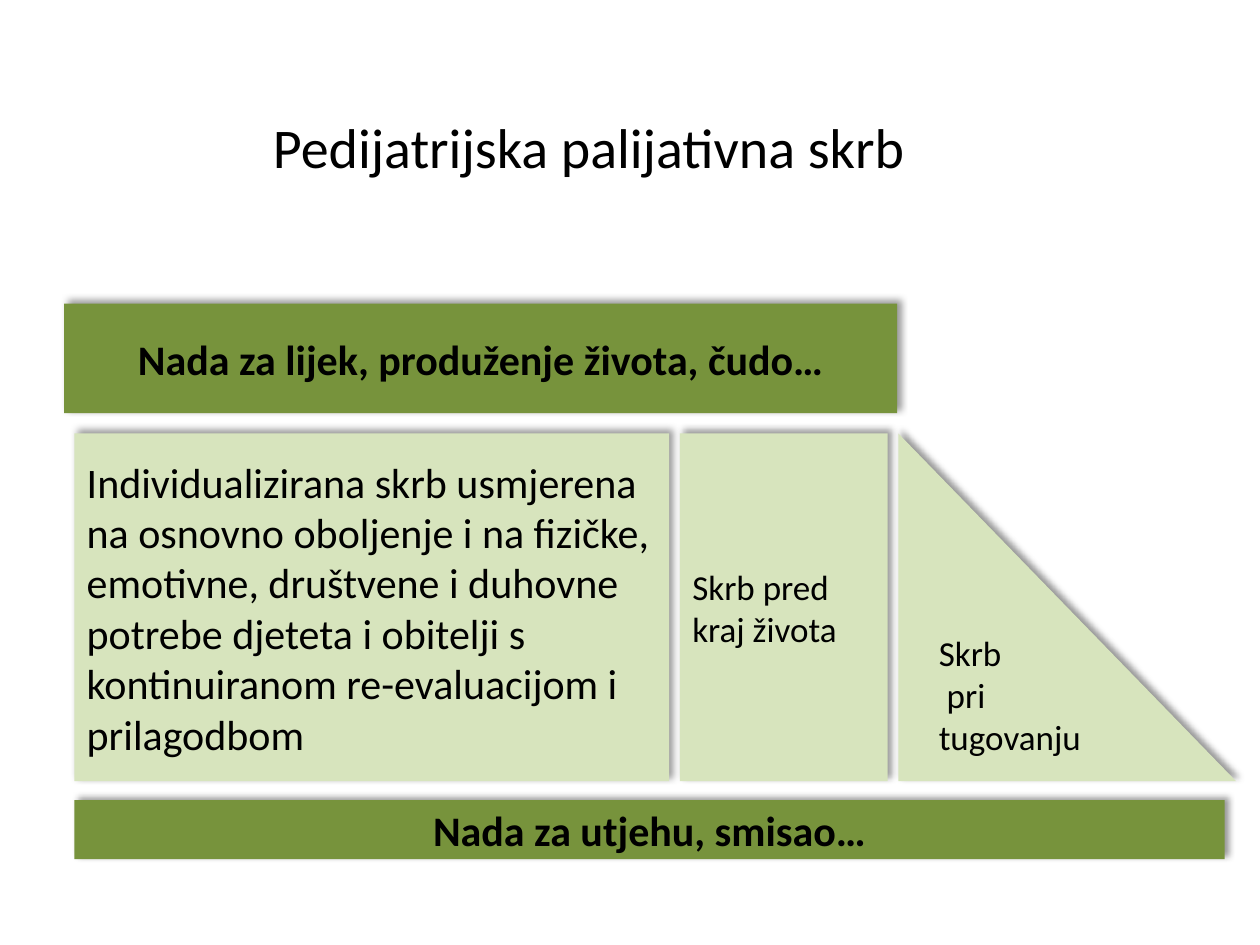
"""Build the slide on paediatric palliative care and its phases."""
from lxml.etree import SubElement
from pptx import Presentation
from pptx.dml.color import RGBColor
from pptx.enum.shapes import MSO_SHAPE as Shape
from pptx.enum.text import MSO_ANCHOR as Anchor, PP_ALIGN as Align
from pptx.oxml.ns import qn
from pptx.util import Pt

BLACK = RGBColor(0x00, 0x00, 0x00)
HOPE_GREEN = RGBColor(0x77, 0x93, 0x3C)
CARE_GREEN = RGBColor(0xD7, 0xE4, 0xBD)

TITLE = "Pedijatrijska palijativna skrb"
HOPES = [
    ("Nada za lijek, produženje života, čudo…", (36.7, 173.5, 476, 62.6)),
    ("Nada za utjehu, smisao…", (42.5, 457.2, 657.4, 33.8)),
]
PHASES = [
    (["Individualizirana skrb usmjerena na osnovno oboljenje i na fizičke, "
      "emotivne, društvene i duhovne potrebe djeteta i obitelji s "
      "kontinuiranom re-evaluacijom i prilagodbom"], Shape.RECTANGLE, 340, 24),
    (["Skrb pred kraj života"], Shape.RECTANGLE, 118.8, 20),
    (["Skrb", " pri tugovanju"], Shape.RIGHT_TRIANGLE, 193, 20),
]
PHASE_LEFT, PHASE_TOP, PHASE_HEIGHT, PHASE_GAP = 42.5, 247.7, 198.7, 6


def write(frame, lines, size, align, bold=False):
    frame.word_wrap = True
    frame.text = "\n".join(lines)
    for paragraph in frame.paragraphs:
        paragraph.alignment = align
        font = paragraph.font
        font.name, font.size, font.bold = "Calibri", Pt(size), bold
        font.color.rgb = BLACK


def cast_shadow(shape):
    shape.shadow.inherit = False
    effects = shape._element.spPr.find(qn("a:effectLst"))
    shadow = SubElement(effects, qn("a:outerShdw"), blurRad=str(Pt(4)),
                        dist=str(Pt(3)), dir=str(315 * 60000),
                        algn="bl", rotWithShape="0")
    color = SubElement(shadow, qn("a:srgbClr"), val=str(BLACK))
    SubElement(color, qn("a:alpha"), val="40000")


def add_block(slide, kind, box, fill, lines, size, align, bold=False):
    block = slide.shapes.add_shape(kind, *map(Pt, box))
    block.fill.solid()
    block.fill.fore_color.rgb = fill
    block.line.fill.background()
    cast_shadow(block)
    block.text_frame.vertical_anchor = Anchor.MIDDLE
    write(block.text_frame, lines, size, align, bold)


def main():
    deck = Presentation()
    deck.slide_width, deck.slide_height = Pt(720), Pt(540)
    slide = deck.slides.add_slide(deck.slide_layouts[6])

    title = slide.shapes.add_textbox(Pt(25.2), Pt(60.5), Pt(622.8), Pt(442))
    write(title.text_frame, [TITLE], 32, Align.CENTER)

    (cure, cure_box), (comfort, comfort_box) = HOPES
    add_block(slide, Shape.RECTANGLE, cure_box, HOPE_GREEN, [cure], 24, Align.CENTER, True)
    left = PHASE_LEFT
    for lines, kind, width, size in PHASES:
        box = (left, PHASE_TOP, width, PHASE_HEIGHT)
        add_block(slide, kind, box, CARE_GREEN, lines, size, Align.LEFT)
        left += width + PHASE_GAP
    add_block(slide, Shape.RECTANGLE, comfort_box, HOPE_GREEN, [comfort], 24, Align.CENTER, True)

    deck.save("out.pptx")


if __name__ == "__main__":
    main()
